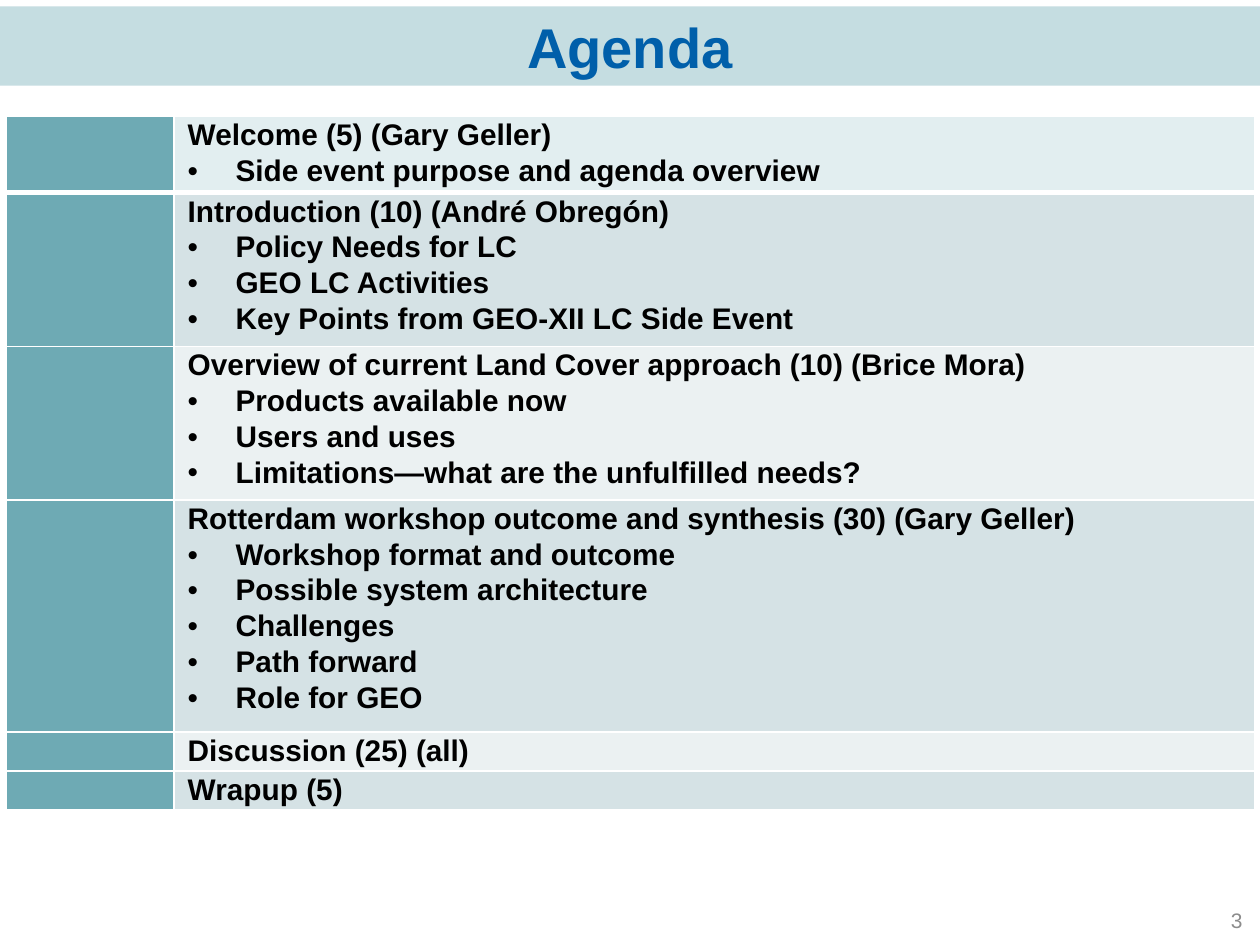
from dataclasses import dataclass

from lxml.etree import SubElement
from pptx import Presentation
from pptx.dml.color import RGBColor
from pptx.enum.text import MSO_ANCHOR, PP_ALIGN
from pptx.oxml.ns import qn
from pptx.util import Inches, Pt

TITLE = "Agenda"
SLIDE_NUMBER = "3"

# (heading, bullet points, row height in inches)
AGENDA = [
    ("Welcome (5) (Gary Geller)", ["Side event purpose and agenda overview"], 0.61),
    ("Introduction (10) (André Obregón)",
     ["Policy Needs for LC", "GEO LC Activities",
      "Key Points from GEO-XII LC Side Event"], 1.22),
    ("Overview of current Land Cover approach (10) (Brice Mora)",
     ["Products available now", "Users and uses",
      "Limitations—what are the unfulfilled needs?"], 1.22),
    ("Rotterdam workshop outcome and synthesis (30) (Gary Geller)",
     ["Workshop format and outcome", "Possible system architecture",
      "Challenges", "Path forward", "Role for GEO"], 1.84),
    ("Discussion (25) (all)", [], 0.31),
    ("Wrapup (5)", [], 0.31),
]
COLUMN_WIDTHS = [1.33, 8.58]


@dataclass(frozen=True)
class Theme:
    font: str = "Arial"
    title_size: int = 32
    body_size: int = 17
    number_size: int = 12
    title: str = "005FAA"
    title_band: str = "C5DDE1"
    text: str = "000000"
    number: str = "8C8C8C"
    border: str = "FFFFFF"
    side_column: str = "6EAAB4"
    first_row: str = "E2EEF0"
    bands: tuple = ("EBF1F2", "D5E2E5")


THEME = Theme()


def set_fill(target, color):
    target.fill.solid()
    target.fill.fore_color.rgb = RGBColor.from_string(color)


def set_font(paragraph, size, color, bold=False):
    font = paragraph.font
    font.name = THEME.font
    font.size = Pt(size)
    font.bold = bold
    font.color.rgb = RGBColor.from_string(color)


def set_margins(target, side):
    target.margin_left = target.margin_right = Inches(side)
    target.margin_top = target.margin_bottom = 0


def set_borders(cell, bottom_width):
    properties = cell._tc.get_or_add_tcPr()
    for edge, width in (("L", 1), ("R", 1), ("T", 1), ("B", bottom_width)):
        line = SubElement(properties, qn(f"a:ln{edge}"), w=str(Pt(width)))
        fill = SubElement(line, qn("a:solidFill"))
        SubElement(fill, qn("a:srgbClr"), val=THEME.border)


def add_bullet(paragraph):
    properties = paragraph._p.get_or_add_pPr()
    properties.set("marL", str(Inches(0.38)))
    properties.set("indent", str(Inches(-0.38)))
    SubElement(properties, qn("a:buFont"), typeface=THEME.font)
    SubElement(properties, qn("a:buChar"), char="•")


def write_topic(cell, heading, points):
    frame = cell.text_frame
    for index, text in enumerate([heading, *points]):
        paragraph = frame.add_paragraph() if index else frame.paragraphs[0]
        paragraph.text = text
        paragraph.line_spacing = 1.07
        if index:
            add_bullet(paragraph)
        set_font(paragraph, THEME.body_size, THEME.text, bold=True)


def add_title(slide):
    title = slide.shapes.title
    title.left, title.top = 0, Inches(0.05)
    title.width, title.height = Inches(10), Inches(0.63)
    set_fill(title, THEME.title_band)
    frame = title.text_frame
    frame.text = TITLE
    frame.vertical_anchor = MSO_ANCHOR.MIDDLE
    set_margins(frame, 0.1)
    paragraph = frame.paragraphs[0]
    paragraph.alignment = PP_ALIGN.CENTER
    set_font(paragraph, THEME.title_size, THEME.title, bold=True)


def add_agenda(slide):
    heights = [height for _, _, height in AGENDA]
    table = slide.shapes.add_table(
        len(AGENDA), len(COLUMN_WIDTHS), Inches(0.05), Inches(0.92),
        Inches(sum(COLUMN_WIDTHS)), Inches(sum(heights))).table
    table.first_row = table.horz_banding = False
    for column, width in zip(table.columns, COLUMN_WIDTHS):
        column.width = Inches(width)
    for index, (heading, points, height) in enumerate(AGENDA):
        table.rows[index].height = Inches(height)
        row_color = THEME.bands[index % 2] if index else THEME.first_row
        side_cell, topic_cell = table.rows[index].cells
        for cell, color in ((side_cell, THEME.side_column), (topic_cell, row_color)):
            set_margins(cell, 0.11)
            set_borders(cell, bottom_width=1 if index else 3)
            set_fill(cell, color)
        write_topic(topic_cell, heading, points)


def add_slide_number(slide):
    box = slide.shapes.add_textbox(Inches(9.25), Inches(7.16), Inches(0.71), Inches(0.29))
    frame = box.text_frame
    frame.word_wrap = True
    frame.vertical_anchor = MSO_ANCHOR.MIDDLE
    set_margins(frame, 0.1)
    paragraph = frame.paragraphs[0]
    paragraph.text = SLIDE_NUMBER
    paragraph.alignment = PP_ALIGN.RIGHT
    set_font(paragraph, THEME.number_size, THEME.number)


def main():
    presentation = Presentation()
    presentation.slide_width, presentation.slide_height = Inches(10), Inches(7.5)
    slide = presentation.slides.add_slide(presentation.slide_layouts[5])
    add_slide_number(slide)
    add_title(slide)
    add_agenda(slide)
    presentation.save("out.pptx")


if __name__ == "__main__":
    main()
